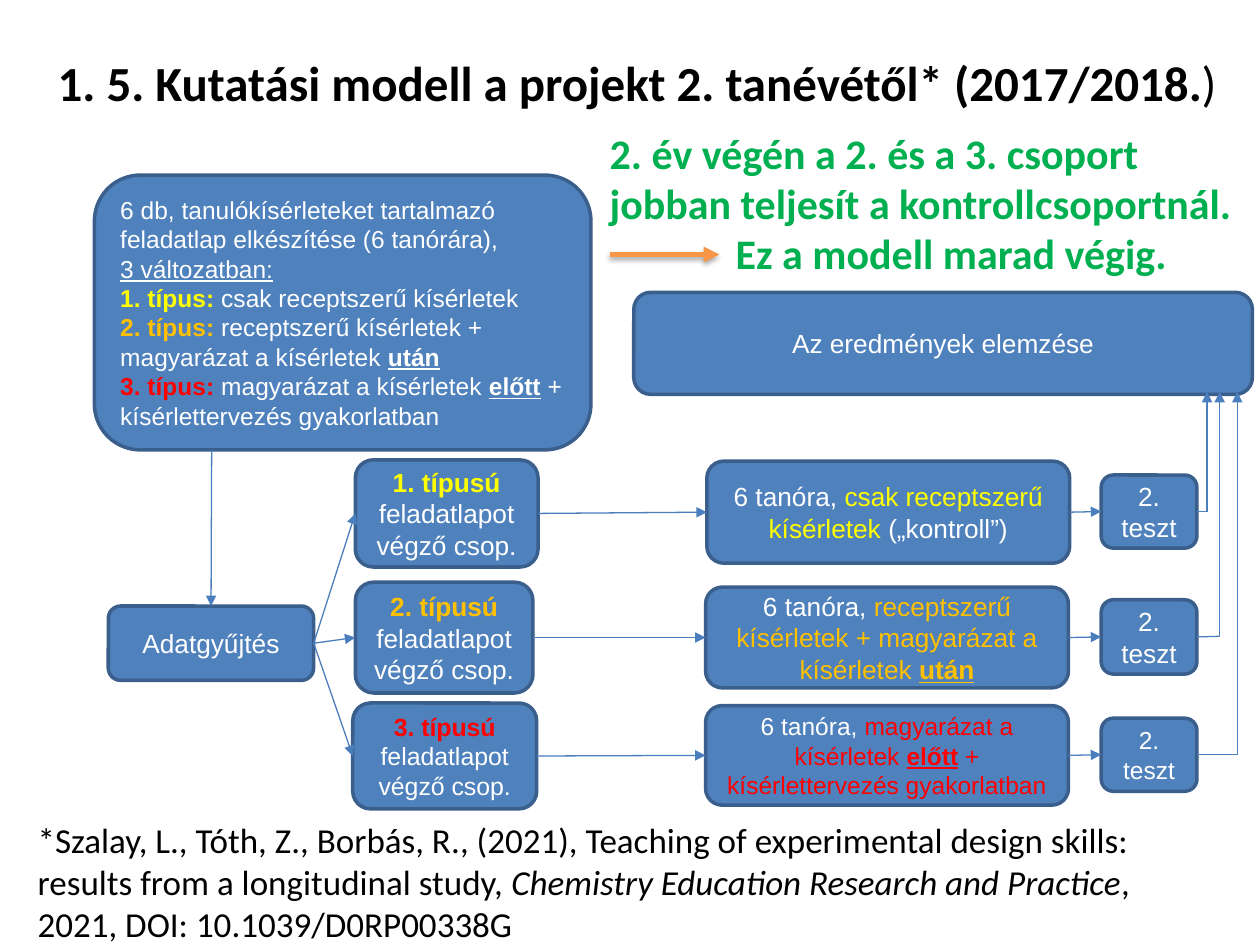
from lxml import etree
from pptx import Presentation
from pptx.dml.color import RGBColor
from pptx.enum.shapes import MSO_CONNECTOR, MSO_SHAPE
from pptx.enum.text import MSO_ANCHOR, PP_ALIGN
from pptx.oxml.ns import qn
from pptx.util import Pt

PX = 9144
ROUNDED = MSO_SHAPE.ROUNDED_RECTANGLE
STRAIGHT = MSO_CONNECTOR.STRAIGHT
MIDDLE = MSO_ANCHOR.MIDDLE
LEFT, CENTER = PP_ALIGN.LEFT, PP_ALIGN.CENTER
TOP_SIDE, LEFT_SIDE, RIGHT_SIDE = 0, 1, 3

COLORS = {
    "fill": "4F81BD", "outline": "3A5F8C", "link": "4B7EBC",
    "white": "FFFFFF", "black": "000000", "yellow": "FFFF00",
    "amber": "FFC000", "red": "FF0000", "green": "00B050", "orange": "F79646",
}

BRANCHES = [
    {
        "top": 365, "riser": 678, "sizes": (15, 15, 15),
        "boxes": ((2, 0, 145, 85), (281, 1, 288, 81), (594, 12, 76, 58)),
        "group": ("1. típusú ", "yellow"),
        "lesson": [("csak receptszerű kísérletek ", "yellow", ""), ("(„kontroll”)", "white", "")],
    },
    {
        "top": 462, "riser": 688, "sizes": (15, 15, 15),
        "boxes": ((2, 0, 141, 88), (280, 4, 288, 80), (594, 14, 76, 59)),
        "group": ("2. típusú ", "amber"),
        "lesson": [("receptszerű kísérletek + magyarázat a kísérletek ", "amber", ""), ("után", "amber", "bu")],
    },
    {
        "top": 558, "riser": 702, "sizes": (14.2, 14, 14),
        "boxes": ((0, 0, 146, 84), (280, 2, 288, 79), (594, 12, 76, 58)),
        "group": ("3. típusú ", "red"),
        "lesson": [
            ("magyarázat a kísérletek ", "red", ""),
            ("előtt", "red", "bu"),
            (" + kísérlettervezés gyakorlatban", "red", ""),
        ],
    },
]


def rgb(name):
    return RGBColor.from_string(COLORS[name])


def emu(box):
    return [value * PX for value in box]


def inside(box, part):
    return (box[0] + part[0], box[1] + part[1], part[2], part[3])


def write(frame, paragraphs, size, font, align):
    frame.word_wrap = True
    for index, spans in enumerate(paragraphs):
        para = frame.add_paragraph() if index else frame.paragraphs[0]
        para.alignment = align
        for text, color, style in spans:
            span = para.add_run()
            span.text = text
            span.font.size = Pt(size)
            span.font.name = font
            span.font.color.rgb = rgb(color)
            span.font.bold = "b" in style
            span.font.italic = "i" in style
            span.font.underline = "u" in style


def add_box(page, box, paragraphs, size=15, align=CENTER):
    shape = page.shapes.add_shape(ROUNDED, *emu(box))
    shape.shadow.inherit = False
    shape.fill.solid()
    shape.fill.fore_color.rgb = rgb("fill")
    shape.line.color.rgb = rgb("outline")
    shape.line.width = Pt(2)
    shape.text_frame.vertical_anchor = MIDDLE
    write(shape.text_frame, paragraphs, size, "Arial", align)
    return shape


def add_text(page, box, paragraphs, size, align=LEFT):
    frame = page.shapes.add_textbox(*emu(box)).text_frame
    write(frame, paragraphs, size, "Calibri", align)
    return frame


def add_line(page, start, end, color="link", width=0.75, arrow=True):
    line = page.shapes.add_connector(STRAIGHT, *emu(start + end))
    line.line.color.rgb = rgb(color)
    line.line.width = Pt(width)
    properties = line.element.spPr
    if arrow:
        etree.SubElement(properties.find(qn("a:ln")), qn("a:tailEnd"), type="triangle")
    etree.SubElement(properties, qn("a:effectLst"))
    return line


def join(page, source, target):
    line = add_line(page, (0, 0), (0, 0))
    line.begin_connect(source, RIGHT_SIDE)
    line.end_connect(target, LEFT_SIDE)


def add_shadow(line):
    effects = line.element.spPr.find(qn("a:effectLst"))
    shadow = etree.SubElement(effects, qn("a:outerShdw"), blurRad=str(Pt(3.1)),
                              dist=str(Pt(1.8)), dir="5400000", rotWithShape="0")
    color = etree.SubElement(shadow, qn("a:srgbClr"), val=COLORS["black"])
    etree.SubElement(color, qn("a:alpha"), val="35000")


def draw_title(page, box):
    add_text(page, box, [[
        ("1. 5. Kutatási modell a projekt 2. tanévétől* (2017/2018.", "black", "b"),
        (") ", "black", ""),
    ]], 28, CENTER)


def draw_conclusion(page, box):
    frame = add_text(page, box, [
        [("2. év végén a 2. és a 3. csoport jobban teljesít a kontrollcsoportnál.", "green", "b")],
        [("Ez a modell marad végig.", "green", "b")],
    ], 24)
    frame.paragraphs[1]._p.get_or_add_pPr().set("marL", str(100 * PX))
    left, top = box[0] + 10, box[1] + 106
    add_shadow(add_line(page, (left, top), (left + 87, top), "orange", 3))


def draw_preparation(page, box):
    add_box(page, inside(box, (0, 0, 394, 218)), [
        [("6 db, tanulókísérleteket tartalmazó feladatlap elkészítése (6 tanórára),", "white", "")],
        [("3 változatban:", "white", "u")],
        [("1. típus: ", "yellow", "b"), ("csak receptszerű kísérletek", "white", "")],
        [("2. típus: ", "amber", "b"),
         ("receptszerű kísérletek + magyarázat a kísérletek ", "white", ""),
         ("után", "white", "bu")],
        [("3. típus: ", "red", "b"), ("magyarázat a kísérletek ", "white", ""),
         ("előtt", "white", "bu"), (" + kísérlettervezés gyakorlatban", "white", "")],
    ], 14, LEFT)
    collection = add_box(page, inside(box, (11, 342, 163, 59)), [[("Adatgyűjtés", "white", "")]])
    arrow = add_line(page, (box[0] + 93, box[1] + 218), (box[0] + 93, box[1] + 342))
    arrow.end_connect(collection, TOP_SIDE)
    return collection


def draw_branch(page, box, branch, collection, results_bottom):
    group_name, group_color = branch["group"]
    texts = (
        [(group_name, group_color, "b"), ("feladatlapot végző csop.", "white", "")],
        [("6 tanóra, ", "white", "")] + branch["lesson"],
        [("2. teszt", "white", "")],
    )
    previous = collection
    for part, spans, size in zip(branch["boxes"], texts, branch["sizes"]):
        step = add_box(page, inside(box, part), [spans], size)
        join(page, previous, step)
        previous = step
    left, top, width, height = inside(box, branch["boxes"][-1])
    middle = top + height // 2
    riser = box[0] + branch["riser"]
    outlet = add_line(page, (left + width, middle), (riser, middle), arrow=False)
    outlet.begin_connect(previous, RIGHT_SIDE)
    add_line(page, (riser, middle), (riser, results_bottom))


def draw_source(page, box):
    add_text(page, box, [
        [("*Szalay, L., Tóth, Z., Borbás, R., (2021), Teaching of experimental design skills:", "black", "")],
        [("results from a longitudinal study, ", "black", ""),
         ("Chemistry Education Research and Practice", "black", "i"), (",", "black", "")],
        [("2021, DOI: 10.1039/D0RP00338G", "black", "")],
    ], 20)


def main():
    deck = Presentation()
    deck.slide_width, deck.slide_height = 1000 * PX, 750 * PX
    page = deck.slides.add_slide(deck.slide_layouts[6])
    results = (503, 232, 491, 81)
    collection = draw_preparation(page, (75, 139, 394, 401))
    add_box(page, results, [[("Az eredmények elemzése", "white", "")]])
    for branch in BRANCHES:
        draw_branch(page, (280, branch["top"], 702, 88), branch, collection, results[1] + results[3] - 2)
    draw_title(page, (20, 37, 980, 57))
    draw_source(page, (20, 645, 975, 111))
    draw_conclusion(page, (474, 96, 526, 131))
    deck.save("out.pptx")


if __name__ == "__main__":
    main()
